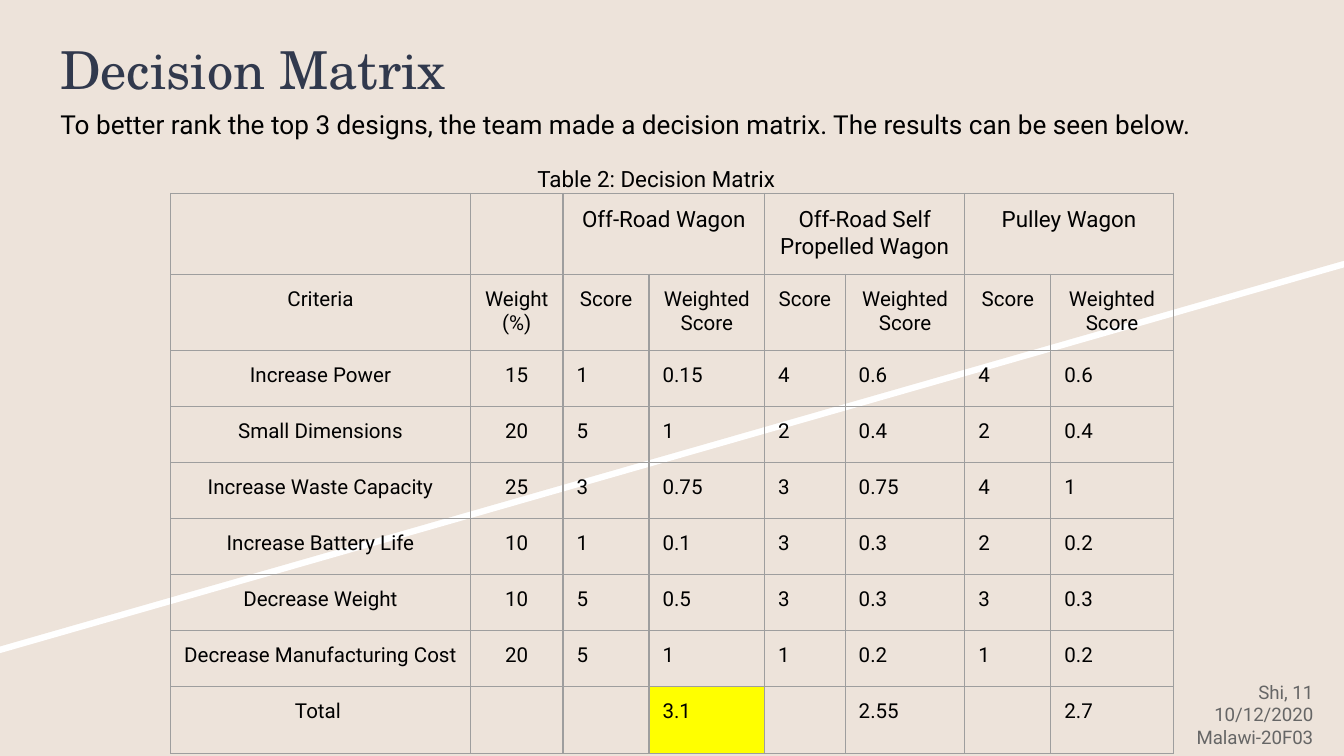
from lxml.etree import SubElement
from pptx import Presentation
from pptx.dml.color import RGBColor
from pptx.enum.text import MSO_ANCHOR, PP_ALIGN
from pptx.oxml.ns import qn
from pptx.util import Inches, Pt

BEIGE, WHITE, NAVY, BLACK = "EDE3DA", "FFFFFF", "31394D", "000000"
GRAY, BORDER, YELLOW = "666666", "9E9E9E", "FFFF00"

# Content
TITLE = "Decision Matrix"
INTRO = ("To better rank the top 3 designs, the team made a decision matrix. "
         "The results can be seen below.")
CAPTION = "Table 2: Decision Matrix"
FOOTER = ["Shi, 11", "10/12/2020", "Malawi-20F03"]
DESIGNS = ["Off-Road Wagon", "Off-Road Self Propelled Wagon", "Pulley Wagon"]
CRITERIA = [
    ("Increase Power", "15", "1", "0.15", "4", "0.6", "4", "0.6"),
    ("Small Dimensions", "20", "5", "1", "2", "0.4", "2", "0.4"),
    ("Increase Waste Capacity", "25", "3", "0.75", "3", "0.75", "4", "1"),
    ("Increase Battery Life", "10", "1", "0.1", "3", "0.3", "2", "0.2"),
    ("Decrease Weight", "10", "5", "0.5", "3", "0.3", "3", "0.3"),
    ("Decrease Manufacturing Cost", "20", "5", "1", "1", "0.2", "1", "0.2"),
    ("Total ", "", "", "3.1", "", "2.55", "", "2.7"),
]
COL_WIDTHS = [2.23, 0.69, 0.64, 0.86, 0.6, 0.89, 0.64, 0.91]
ROW_HEIGHT, HEADER_HEIGHT = Pt(30), Inches(0.53)
WINNER = (8, 3)  # row and column of the best total

design_row = ["", ""] + [t for name in DESIGNS for t in (name, "")]
header_row = ["Criteria", "Weight (%)"] + ["Score", "Weighted Score"] * len(DESIGNS)
ROWS = [design_row, header_row, *CRITERIA]


def rgb(color):
    return RGBColor.from_string(color)


def write(tf, text, size=11, font="Roboto", color=BLACK, align=PP_ALIGN.LEFT):
    lines = [text] if isinstance(text, str) else text
    for i, line in enumerate(lines):
        p = tf.paragraphs[0] if i == 0 else tf.add_paragraph()
        p.alignment = align
        r = p.add_run()
        r.text = line
        r.font.size, r.font.name = Pt(size), font
        r.font.color.rgb = rgb(color)


def add_text(s, box, text, anchor=MSO_ANCHOR.TOP, **fmt):
    tf = s.shapes.add_textbox(*map(Inches, box)).text_frame
    tf.word_wrap = True
    tf.vertical_anchor = anchor
    tf.margin_left = tf.margin_right = tf.margin_top = tf.margin_bottom = Inches(0.1)
    write(tf, text, **fmt)


def add_slope(s, top, color):
    points = [(0, top), (10, top), (10, top + 1.94), (0, top + 4.81)]
    corners = [(Inches(x), Inches(y)) for x, y in points]
    builder = s.shapes.build_freeform(*corners[0])
    builder.add_line_segments(corners[1:], close=True)
    sp = builder.convert_to_shape()
    sp.shadow.inherit = False
    sp.fill.solid()
    sp.fill.fore_color.rgb = rgb(color)
    sp.line.fill.background()


def add_borders(cell):
    tc_pr = cell._tc.get_or_add_tcPr()
    for side in ("lnL", "lnR", "lnT", "lnB"):
        ln = SubElement(tc_pr, qn(f"a:{side}"), w=str(Pt(0.75)))
        fill = SubElement(ln, qn("a:solidFill"))
        SubElement(fill, qn("a:srgbClr"), val=BORDER)


# Widescreen 16:9 slide
prs = Presentation()
prs.slide_width, prs.slide_height = Inches(10), Inches(10) * 9 // 16
s = prs.slides.add_slide(prs.slide_layouts[6])

# Background with a white diagonal stripe
s.background.fill.solid()
s.background.fill.fore_color.rgb = rgb(BEIGE)
add_slope(s, 0.05, WHITE)
add_slope(s, 0, BEIGE)

# Title and footer
add_text(s, (0.35, 0.18, 3.37, 0.78), TITLE, size=28, font="TeX Gyre Schola", color=NAVY)
add_text(s, (8.71, 5.1, 1.16, 0.43), FOOTER, anchor=MSO_ANCHOR.MIDDLE,
         size=10, color=GRAY, align=PP_ALIGN.RIGHT)

# Decision table
heights = [ROW_HEIGHT, HEADER_HEIGHT] + [ROW_HEIGHT] * len(CRITERIA)
table = s.shapes.add_table(len(ROWS), len(COL_WIDTHS), Inches(1.27), Inches(1.44),
                           Inches(sum(COL_WIDTHS)), sum(heights)).table
table.first_row = table.horz_banding = False
for column, width in zip(table.columns, COL_WIDTHS):
    column.width = Inches(width)
for row, height in zip(table.rows, heights):
    row.height = height
for i, values in enumerate(ROWS):
    for j, text in enumerate(values):
        cell = table.cell(i, j)
        cell.margin_left = cell.margin_right = Inches(0.1)
        cell.margin_top = cell.margin_bottom = Inches(0.1)
        add_borders(cell)
        if (i, j) == WINNER:
            cell.fill.solid()
            cell.fill.fore_color.rgb = rgb(YELLOW)
        else:
            cell.fill.background()
        if text:
            centred = i < 2 or j < 2
            write(cell.text_frame, text, size=12 if i == 0 else 11,
                  align=PP_ALIGN.CENTER if centred else PP_ALIGN.LEFT)
for j in range(2, len(COL_WIDTHS), 2):
    table.cell(0, j).merge(table.cell(0, j + 1))

# Introduction and table caption
add_text(s, (0.35, 0.71, 9.12, 0.48), INTRO, size=14)
add_text(s, (3.9, 1.13, 2.02, 0.31), CAPTION, size=12)

prs.save("out.pptx")
